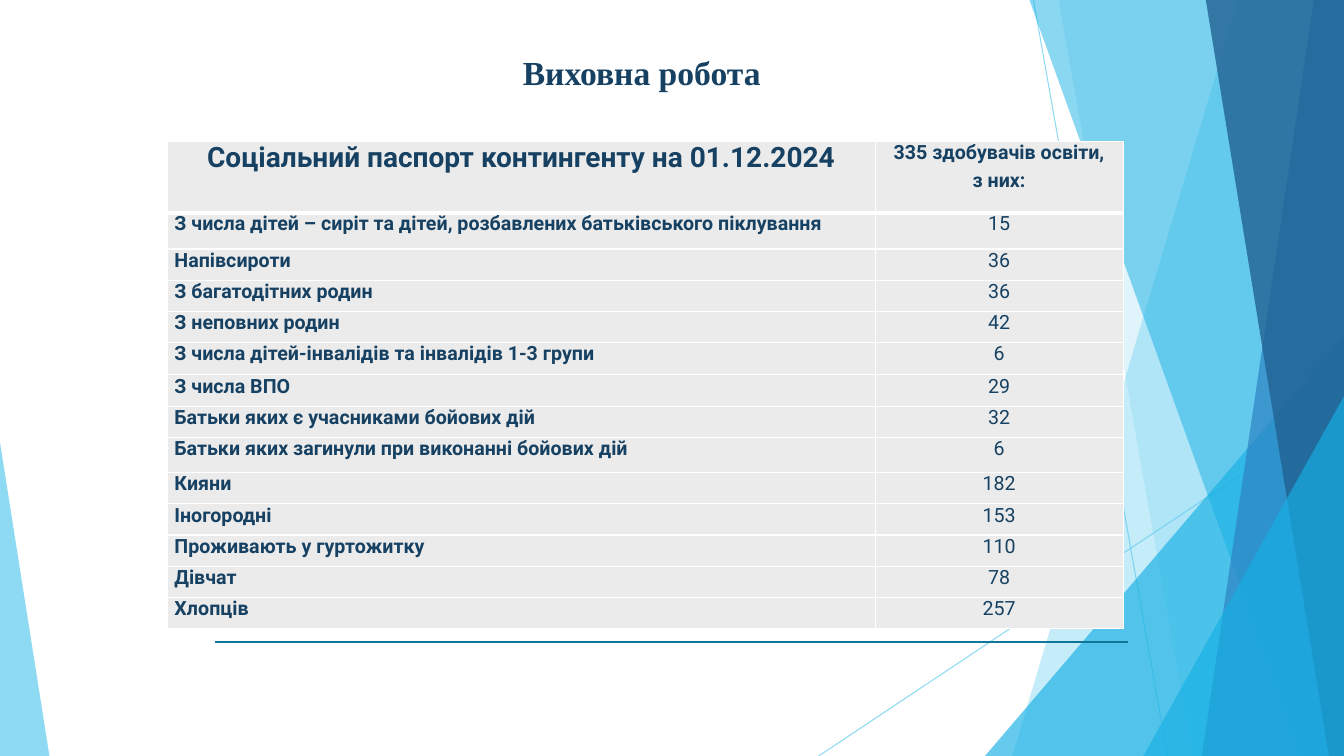
from lxml.etree import SubElement, fromstring
from pptx import Presentation
from pptx.dml.color import RGBColor
from pptx.enum.shapes import MSO_CONNECTOR, MSO_SHAPE
from pptx.enum.text import MSO_ANCHOR, PP_ALIGN
from pptx.oxml.ns import nsdecls, qn
from pptx.util import Inches, Pt

SLIDE_W, SLIDE_H = 13.33, 7.5
INK, CELL, WHITE = "174162", "EBEBEB", "FFFFFF"
SKY, AZURE, BLUE, NAVY, TEAL = "5FCBEF", "17B0E4", "2E83C3", "226292", "0F7698"

# left edge at the top, left edge at the bottom, colour, opacity in percent
OUTER_FACETS = [(12.28, 10.04, SKY, 36), (10.5, 11.83, SKY, 20)]
INNER_FACETS = [(10.21, 12.91, AZURE, 50), (13.03, 11.92, BLUE, 70), (11.96, 13.18, NAVY, 80)]

HEADING = "Соціальний паспорт контингенту на 01.12.2024"
TOTAL = ["335 здобувачів освіти,", "з них:"]
GROUPS = [
    ("З числа дітей – сиріт та дітей, розбавлених батьківського піклування", 15),
    ("Напівсироти", 36),
    ("З багатодітних родин", 36),
    ("З неповних родин", 42),
    ("З числа дітей-інвалідів та інвалідів 1-3 групи", 6),
    ("З числа ВПО", 29),
    ("Батьки яких є учасниками бойових дій", 32),
    ("Батьки яких загинули при виконанні бойових дій", 6),
    ("Кияни", 182),
    ("Іногородні", 153),
    ("Проживають у гуртожитку", 110),
    ("Дівчат", 78),
    ("Хлопців", 257),
]
COLUMN_WIDTHS = [7.02, 2.46]
ROW_HEIGHT = 0.31
TALL_ROWS = {0: 0.71, 1: 0.36, 5: 0.32, 8: 0.35}


def color(hex_value):
    return RGBColor.from_string(hex_value)


def set_opacity(shape, percent):
    for tint in shape._element.spPr.iter(qn("a:srgbClr")):
        SubElement(tint, qn("a:alpha"), val=str(percent * 1000))


def paint(shape, fill, opacity):
    shape.shadow.inherit = False
    shape.fill.solid()
    shape.fill.fore_color.rgb = color(fill)
    shape.line.fill.background()
    set_opacity(shape, opacity)


def add_line(slide, start, end, tint, width, opacity=100):
    line = slide.shapes.add_connector(
        MSO_CONNECTOR.STRAIGHT, *[Inches(v) for v in (*start, *end)])
    line.line.color.rgb = color(tint)
    line.line.width = Pt(width)
    SubElement(line._element.spPr, qn("a:effectLst"))
    set_opacity(line, opacity)


def add_facet(slide, top_x, bottom_x, fill, opacity):
    """Full-height panel with a slanted left side, ending at the right slide edge."""
    corners = [(SLIDE_W, 0), (SLIDE_W, SLIDE_H), (bottom_x, SLIDE_H)]
    builder = slide.shapes.build_freeform(Inches(top_x), 0)
    builder.add_line_segments([(Inches(x), Inches(y)) for x, y in corners])
    paint(builder.convert_to_shape(), fill, opacity)


def add_corner(slide, left, top, width, apex, fill, opacity):
    """Triangle standing on the bottom edge of the slide."""
    corner = slide.shapes.add_shape(
        MSO_SHAPE.ISOSCELES_TRIANGLE,
        *[Inches(v) for v in (left, top, width, SLIDE_H - top)])
    corner.adjustments[0] = apex
    paint(corner, fill, opacity)


def add_backdrop(slide):
    add_line(slide, (10.25, 0), (11.58, SLIDE_H), SKY, 0.75, 70)
    add_line(slide, (SLIDE_W, 4.03), (8.12, SLIDE_H), SKY, 0.75, 70)
    for facet in OUTER_FACETS:
        add_facet(slide, *facet)
    add_corner(slide, 9.77, 3.33, 3.56, 1, AZURE, 66)
    for facet in INNER_FACETS:
        add_facet(slide, *facet)
    add_corner(slide, 11.34, 3.93, 1.99, 1, AZURE, 66)
    add_corner(slide, 0, 4.39, 0.49, 0, SKY, 70)


def write(paragraph, text, size, font="Roboto", bold=True, align=PP_ALIGN.CENTER):
    paragraph.alignment = align
    run = paragraph.add_run()
    run.text = text
    run.font.color.rgb = color(INK)
    for name, value in {"size": Pt(size), "name": font, "bold": bold}.items():
        setattr(run.font, name, value)


def add_title(slide, left, top, width, height):
    title = slide.shapes.title
    box = {"left": left, "top": top, "width": width, "height": height}
    for name, value in box.items():
        setattr(title, name, Inches(value))
    frame = title.text_frame
    frame.margin_top = frame.margin_bottom = 0
    frame.vertical_anchor = MSO_ANCHOR.MIDDLE
    write(frame.paragraphs[0], "Виховна робота", 24, "Times New Roman")


def style_cell(cell, top=1, bottom=1):
    """Grey fill, narrow margins and white borders; top and bottom widths in points."""
    cell.margin_left = cell.margin_right = Inches(0.07)
    cell.margin_top = cell.margin_bottom = 0
    cell.fill.solid()
    cell.fill.fore_color.rgb = color(CELL)
    properties = cell._tc.get_or_add_tcPr()
    widths = {"lnL": 1, "lnR": 1, "lnT": top, "lnB": bottom}
    for place, (side, width) in enumerate(widths.items()):
        properties.insert(place, fromstring(
            f'<a:{side} {nsdecls("a")} w="{Pt(width)}"><a:solidFill>'
            f'<a:srgbClr val="{WHITE}"/></a:solidFill></a:{side}>'))


def add_passport(slide, left, top):
    """Table of student groups, with its top left corner at the given point."""
    heights = [TALL_ROWS.get(i, ROW_HEIGHT) for i in range(len(GROUPS) + 1)]
    table = slide.shapes.add_table(
        len(heights), len(COLUMN_WIDTHS), Inches(left), Inches(top),
        Inches(sum(COLUMN_WIDTHS)), Inches(sum(heights))).table
    table.first_row = table.horz_banding = False
    for column, width in zip(table.columns, COLUMN_WIDTHS):
        column.width = Inches(width)
    for i, (row, height) in enumerate(zip(table.rows, heights)):
        row.height = Inches(height)
        for cell in row.cells:
            style_cell(cell, top=3 if i == 1 else 1, bottom=3 if i == 0 else 1)

    write(table.cell(0, 0).text_frame.paragraphs[0], HEADING, 20)
    total = table.cell(0, 1).text_frame
    total.add_paragraph()
    for paragraph, text in zip(total.paragraphs, TOTAL):
        paragraph.space_before = Pt(3.6)
        write(paragraph, text, 14)
    for i, (group, count) in enumerate(GROUPS, start=1):
        label, value = [cell.text_frame.paragraphs[0] for cell in table.rows[i].cells]
        write(label, group, 14, align=PP_ALIGN.JUSTIFY)
        value.space_before = Pt(3.6)
        write(value, str(count), 14, bold=False)


def main():
    deck = Presentation()
    deck.slide_width, deck.slide_height = Inches(SLIDE_W), Inches(SLIDE_H)
    slide = deck.slides.add_slide(deck.slide_layouts[5])
    add_backdrop(slide)
    add_line(slide, (2.13, 6.37), (11.19, 6.37), TEAL, 1.5)
    add_title(slide, 0.7, 0.51, 11.33, 0.42)
    add_passport(slide, 1.66, 1.4)
    deck.save("out.pptx")


if __name__ == "__main__":
    main()
